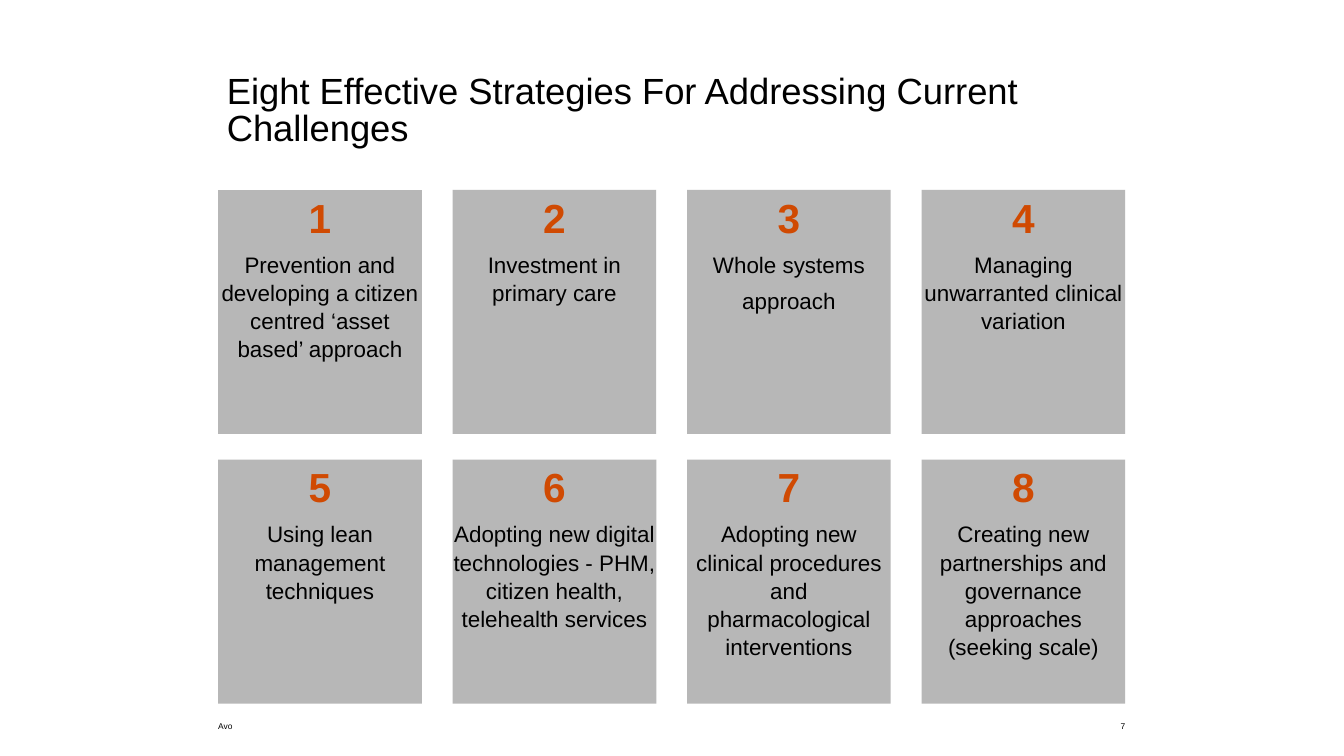
from dataclasses import dataclass

from lxml.etree import SubElement
from pptx import Presentation
from pptx.dml.color import RGBColor
from pptx.enum.shapes import MSO_SHAPE
from pptx.enum.text import MSO_ANCHOR, MSO_AUTO_SIZE, PP_ALIGN
from pptx.oxml.ns import qn
from pptx.util import Inches, Pt

FONT = "Arial"
BLACK, ORANGE, GREY = "000000", "D04A02", "B7B7B7"


@dataclass(frozen=True)
class Grid:
    left: float = 4.33
    top: float = 3.77
    width: float = 4.04
    height: float = 4.84
    col_step: float = 4.653
    row_step: float = 5.35
    cols: int = 4

    @property
    def right(self) -> float:
        return self.left + (self.cols - 1) * self.col_step + self.width

    def cell(self, index: int) -> tuple[float, float, float, float]:
        row, col = divmod(index, self.cols)
        return (self.left + col * self.col_step, self.top + row * self.row_step,
                self.width, self.height)


@dataclass(frozen=True)
class Strategy:
    lines: tuple[str, ...]
    in_body: bool = False


GRID = Grid()
STRATEGIES = (
    Strategy(("Prevention and developing a citizen centred ‘asset based’ approach",), True),
    Strategy(("Investment in primary care",)),
    Strategy(("Whole systems", "approach")),
    Strategy(("Managing unwarranted clinical variation",)),
    Strategy(("Using lean management techniques",)),
    Strategy(("Adopting new digital technologies - PHM, citizen health, telehealth services",), True),
    Strategy(("Adopting new clinical procedures and pharmacological interventions",), True),
    Strategy(("Creating new partnerships and governance approaches (seeking scale)",), True),
)


def rgb(color: str) -> RGBColor:
    return RGBColor.from_string(color)


def place(sp, left: float, top: float, width: float, height: float) -> None:
    sp.left, sp.top, sp.width, sp.height = map(Inches, (left, top, width, height))


def prepare_frame(sp, anchor=MSO_ANCHOR.TOP, wrap: bool = True):
    tf = sp.text_frame
    tf.margin_left = tf.margin_right = tf.margin_top = tf.margin_bottom = 0
    tf.vertical_anchor = anchor
    tf.word_wrap = wrap
    tf.auto_size = MSO_AUTO_SIZE.NONE
    return tf


def format_paragraph(p, size: float, color: str = BLACK, bold: bool = False,
                     align=PP_ALIGN.LEFT, before: float = 0, spacing: float = 1.0) -> None:
    p.alignment = align
    p.space_before = Pt(before)
    p.line_spacing = spacing
    for r in p.runs:
        r.font.name = FONT
        r.font.size = Pt(size)
        r.font.bold = bold
        r.font.color.rgb = rgb(color)


def remove_bullet(p) -> None:
    pPr = p._p.get_or_add_pPr()
    pPr.set("marL", "0")
    pPr.set("indent", "0")
    SubElement(pPr, qn("a:buNone"))


def add_title(s, text: str) -> None:
    sp = s.shapes.title
    place(sp, 4.5, 1.49, 18, 1.91)
    tf = prepare_frame(sp)
    tf.text = text
    format_paragraph(tf.paragraphs[0], 52, spacing=0.85)


def add_card(s, index: int, strategy: Strategy, bodies) -> None:
    if strategy.in_body:
        sp = next(bodies)
        place(sp, *GRID.cell(index))
    else:
        sp = s.shapes.add_shape(MSO_SHAPE.RECTANGLE, *map(Inches, GRID.cell(index)))
        sp.shadow.inherit = False
    sp.fill.solid()
    sp.fill.fore_color.rgb = rgb(GREY)
    sp.line.fill.background()
    tf = prepare_frame(sp)
    tf.text = "\n".join((str(index + 1), *strategy.lines))
    number, *lines = tf.paragraphs
    format_paragraph(number, 58, ORANGE, True, PP_ALIGN.CENTER, spacing=1.05)
    for p in lines:
        format_paragraph(p, 32, align=PP_ALIGN.CENTER, before=12, spacing=1.05)
    for p in tf.paragraphs:
        remove_bullet(p)


def add_footer(s, text: str, left: float, width: float, align) -> None:
    sp = s.shapes.add_textbox(*map(Inches, (left, 14.31, width, 0.19)))
    tf = prepare_frame(sp, MSO_ANCHOR.BOTTOM)
    tf.text = text
    format_paragraph(tf.paragraphs[0], 12, align=align)


def main() -> None:
    prs = Presentation()
    prs.slide_width, prs.slide_height = Inches(26.67), Inches(15)
    s = prs.slides.add_slide(prs.slide_layouts.get_by_name("Comparison"))
    bodies = iter([sp for sp in s.placeholders if sp.placeholder_format.idx > 0])
    add_title(s, "Eight Effective Strategies For Addressing Current Challenges")
    for index, strategy in enumerate(STRATEGIES):
        add_card(s, index, strategy, bodies)
    add_footer(s, "Avo", GRID.left, 8.71, PP_ALIGN.LEFT)
    add_footer(s, "7", GRID.right - 0.14, 0.14, PP_ALIGN.RIGHT)
    prs.save("out.pptx")


if __name__ == "__main__":
    main()
